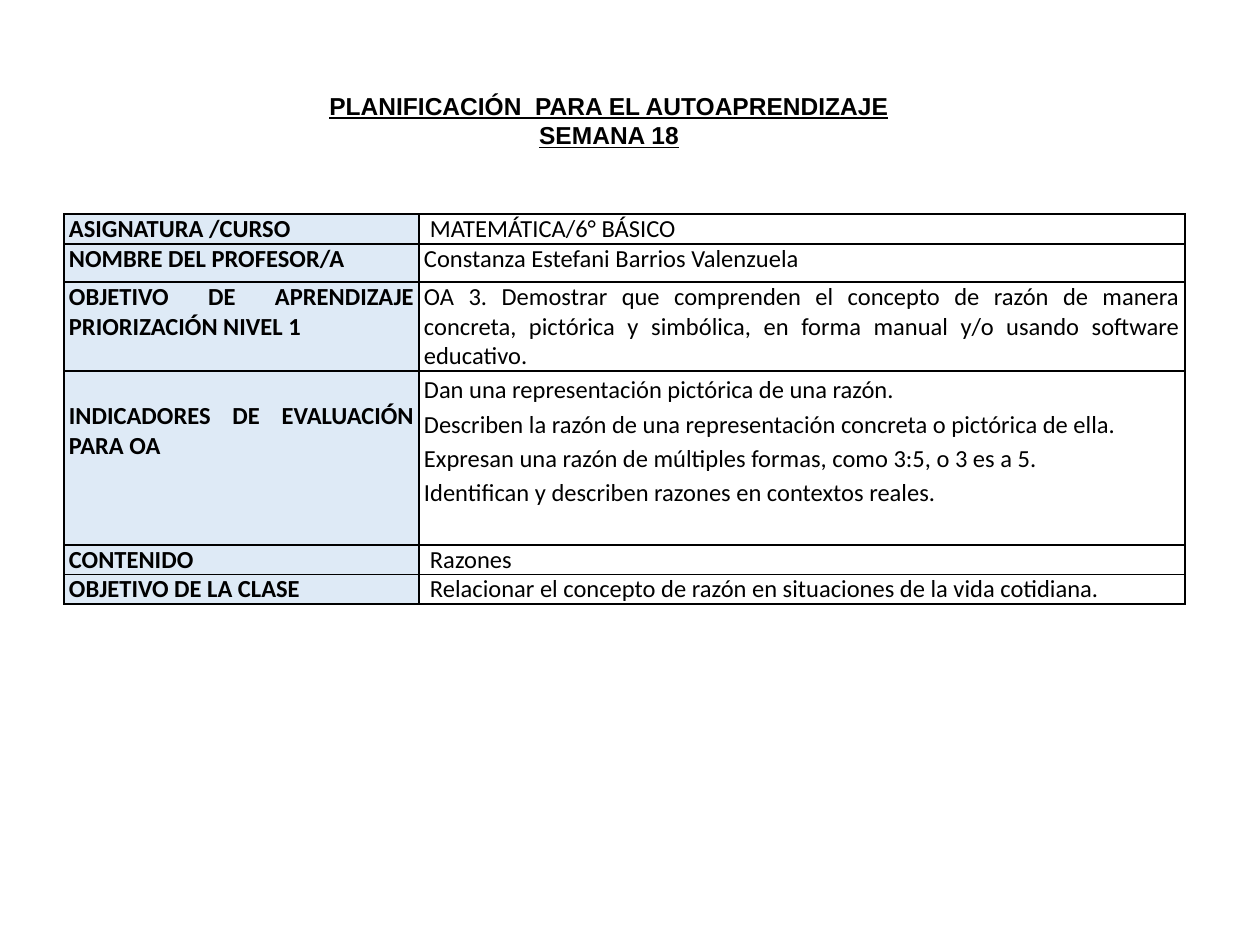
"""Build the week 18 self-learning plan slide for sixth-grade mathematics."""
from lxml import etree
from pptx import Presentation
from pptx import util as u
from pptx.dml.color import RGBColor
from pptx.enum import text
from pptx.oxml import ns

PX = 914400 // 126
COLORS = {"ink": "000000", "label": "DEEAF6"}
TITLE = ["PLANIFICACIÓN  PARA EL AUTOAPRENDIZAJE", "SEMANA 18"]
TITLE_BOX = (315, 84, 588, 72)
TABLE_AT = (64, 214)
COLS = [355, 766]
PAD, INDENT, LINE = 5, 6, 30
ROWS = [
    {"h": 30, "label": "ASIGNATURA /CURSO", "lines": ["MATEMÁTICA/6° BÁSICO"], "indent": INDENT},
    {"h": 38, "label": "NOMBRE DEL PROFESOR/A", "lines": ["Constanza Estefani Barrios Valenzuela"]},
    {"h": 89, "label": "OBJETIVO DE APRENDIZAJE PRIORIZACIÓN NIVEL 1",
     "lines": ["OA 3. Demostrar que comprenden el concepto de razón de manera concreta, pictórica y "
               "simbólica, en forma manual y/o usando software educativo."]},
    {"h": 174, "label": "INDICADORES DE EVALUACIÓN PARA OA", "drop": LINE, "spacing": 1.15,
     "lines": ["Dan una representación pictórica de una razón.",
               "Describen la razón de una representación concreta o pictórica de ella.",
               "Expresan una razón de múltiples formas, como 3:5, o 3 es a 5.",
               "Identifican y describen razones en contextos reales."]},
    {"h": 29, "label": "CONTENIDO", "lines": ["Razones"], "indent": INDENT},
    {"h": 29, "label": "OBJETIVO DE LA CLASE", "indent": INDENT,
     "lines": ["Relacionar el concepto de razón en situaciones de la vida cotidiana."]},
]


def px(*values):
    return [u.Emu(v * PX) for v in values]


def write(tf, lines, font, align, bold=False, underline=False, spacing=None):
    for i, line in enumerate(lines):
        p = tf.add_paragraph() if i else tf.paragraphs[0]
        p.alignment = align
        if spacing:
            p.line_spacing = spacing
        r = p.add_run()
        r.text = line
        r.font.name, r.font.size = font, u.Pt(14)
        r.font.bold, r.font.underline = bold, underline
        r.font.color.rgb = RGBColor.from_string(COLORS["ink"])


def style_cell(cell, fill=None, indent=0, drop=0):
    cell.margin_left, cell.margin_right = px(PAD + indent, PAD)
    cell.margin_top, cell.margin_bottom = px(drop, 0)
    tc_pr = cell._tc.get_or_add_tcPr()
    for side in ("lnL", "lnR", "lnT", "lnB"):
        ln = etree.SubElement(tc_pr, ns.qn(f"a:{side}"), w=str(u.Pt(1)))
        solid = etree.SubElement(ln, ns.qn("a:solidFill"))
        etree.SubElement(solid, ns.qn("a:srgbClr"), val=COLORS["ink"])
    if fill:
        cell.fill.solid()
        cell.fill.fore_color.rgb = RGBColor.from_string(fill)
    else:
        cell.fill.background()


def main():
    prs = Presentation()
    prs.slide_width, prs.slide_height = u.Inches(10), u.Inches(7.5)
    s = prs.slides.add_slide(prs.slide_layouts[6])

    tf = s.shapes.add_textbox(*px(*TITLE_BOX)).text_frame
    tf.word_wrap = False
    tf.auto_size = text.MSO_AUTO_SIZE.SHAPE_TO_FIT_TEXT
    tf.vertical_anchor = text.MSO_ANCHOR.MIDDLE
    write(tf, TITLE, "Arial", text.PP_ALIGN.CENTER, bold=True, underline=True)

    size = (sum(COLS), sum(row["h"] for row in ROWS))
    table = s.shapes.add_table(len(ROWS), len(COLS), *px(*TABLE_AT, *size)).table
    table.first_row = table.horz_banding = False
    for col, width in zip(table.columns, px(*COLS)):
        col.width = width
    for i, row in enumerate(ROWS):
        table.rows[i].height = px(row["h"])[0]
        label, value = table.cell(i, 0), table.cell(i, 1)
        style_cell(label, COLORS["label"], drop=row.get("drop", 0))
        style_cell(value, indent=row.get("indent", 0))
        spacing = row.get("spacing")
        align = text.PP_ALIGN.LEFT if spacing else text.PP_ALIGN.JUSTIFY
        write(label.text_frame, [row["label"]], "Calibri", text.PP_ALIGN.JUSTIFY, bold=True)
        write(value.text_frame, row["lines"], "Calibri", align, spacing=spacing)
    prs.save("out.pptx")


if __name__ == "__main__":
    main()
